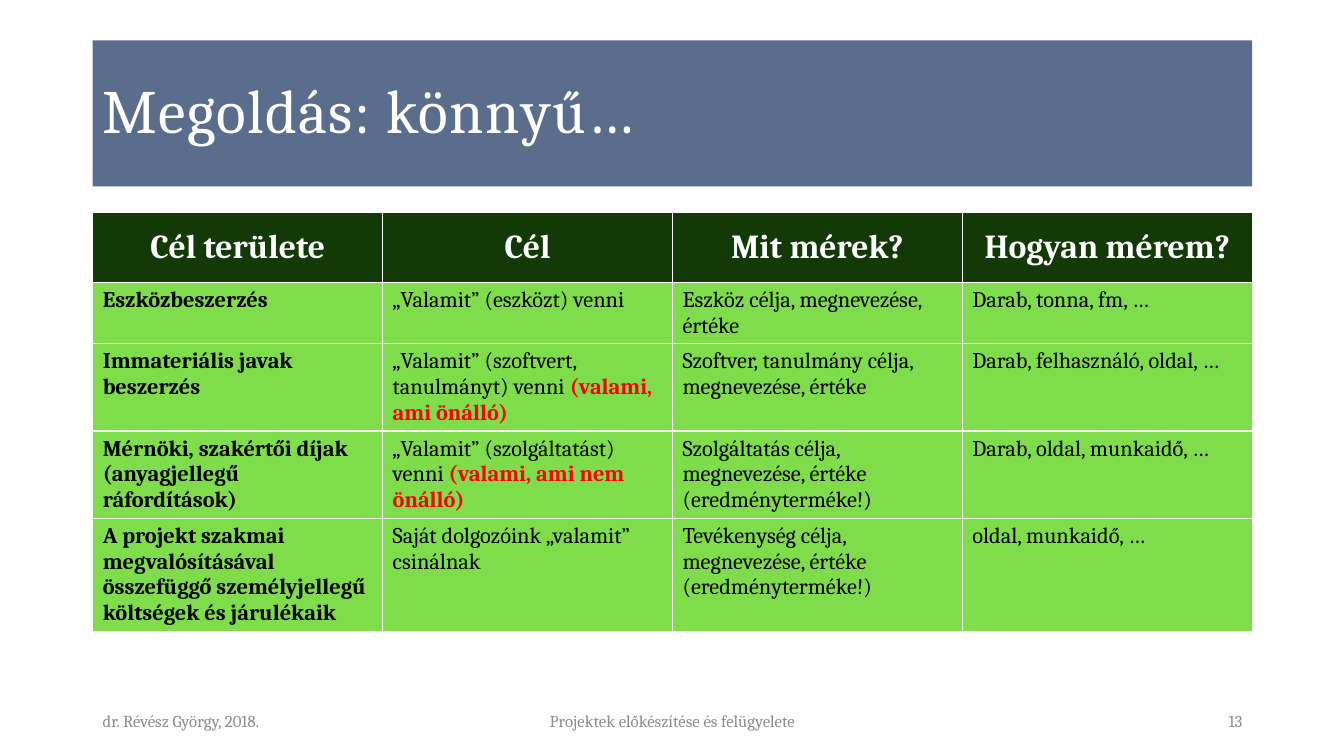
import pptx
import pptx.util
import pptx.dml.color
import pptx.enum.shapes
import pptx.enum.text
import pptx.oxml
import pptx.oxml.ns

EMU_PER_PX = 9144  # 100 px to the inch
ALIGN = pptx.enum.text.PP_ALIGN
ANCHOR = pptx.enum.text.MSO_ANCHOR


def px(length):
    return pptx.util.Emu(length * EMU_PER_PX)


def colour(hex_code):
    return pptx.dml.color.RGBColor.from_string(hex_code)


class SlideBuilder:
    font = "Cambria"
    white, black, grey, red = "FFFFFF", "000000", "8C8C8C", "FF0000"
    blue, dark_green, light_green = "5A6D8D", "123906", "7FDD4B"

    def __init__(self, slide):
        self.slide = slide

    def put_text(self, frame, runs, size, align=ALIGN.LEFT, anchor=ANCHOR.MIDDLE):
        """Fill a text frame with one paragraph of (text, colour, bold) runs."""
        frame.word_wrap = True
        frame.vertical_anchor = anchor
        paragraph = frame.paragraphs[0]
        paragraph.alignment = align
        for text, hex_code, bold in runs:
            run = paragraph.add_run()
            run.text = text
            run.font.color.rgb = colour(hex_code)
            formats = {"name": self.font, "size": pptx.util.Pt(size), "bold": bold}
            for name, value in formats.items():
                setattr(run.font, name, value)
        return paragraph

    def title(self, text, left, top, width, height):
        banner = self.slide.shapes.add_shape(
            pptx.enum.shapes.MSO_SHAPE.RECTANGLE,
            px(left), px(top), px(width), px(height))
        banner.shadow.inherit = False
        banner.fill.solid()
        banner.fill.fore_color.rgb = colour(self.blue)
        banner.line.fill.background()
        heading = self.put_text(banner.text_frame, [(text, self.white, False)], 44)
        heading.line_spacing = 0.9
        heading.runs[0].font._element.set("spc", "100")

    def footer(self, text, left, width, align):
        box = self.slide.shapes.add_textbox(px(left), px(695), px(width), px(40))
        self.put_text(box.text_frame, [(text, self.grey, False)], 12, align)

    def border(self, cell):
        properties = cell._tc.get_or_add_tcPr()
        for position, side in enumerate(("lnL", "lnR", "lnT", "lnB")):
            properties.insert(position, pptx.oxml.parse_xml(
                f'<a:{side} {pptx.oxml.ns.nsdecls("a")} w="12700"><a:solidFill>'
                f'<a:srgbClr val="{self.white}"/></a:solidFill></a:{side}>'))

    def cell(self, cell, runs, fill, size, align, anchor):
        cell.fill.solid()
        cell.fill.fore_color.rgb = colour(fill)
        self.border(cell)
        self.put_text(cell.text_frame, runs, size, align, anchor)
        cell.vertical_anchor = anchor

    def table(self, headers, rows, row_heights, left, top, width, height):
        frame = self.slide.shapes.add_table(
            len(rows) + 1, len(headers), px(left), px(top), px(width), px(height))
        grid = frame.table
        grid.horz_banding = False
        for row, row_height in zip(grid.rows, row_heights):
            row.height = px(row_height)
        frame.height = px(height)
        for column, header in enumerate(headers):
            self.cell(grid.cell(0, column), [(header, self.white, True)],
                      self.dark_green, 24, ALIGN.CENTER, ANCHOR.MIDDLE)
        for number, row in enumerate(rows, 1):
            for column, content in enumerate(row):
                # A tuple holds plain text and a highlighted remark
                text, *remarks = content if isinstance(content, tuple) else (content,)
                runs = [(text, self.black, column == 0)]
                runs += [(remark, self.red, True) for remark in remarks]
                self.cell(grid.cell(number, column), runs,
                          self.light_green, 16, ALIGN.LEFT, ANCHOR.TOP)


HEADERS = ["Cél területe", "Cél", "Mit mérek?", "Hogyan mérem?"]
GOALS = [
    ["Eszközbeszerzés", "„Valamit” (eszközt) venni",
     "Eszköz célja, megnevezése, értéke", "Darab, tonna, fm, …"],
    ["Immateriális javak beszerzés",
     ("„Valamit” (szoftvert, tanulmányt) venni ", "(valami, ami önálló)"),
     "Szoftver, tanulmány célja, megnevezése, értéke",
     "Darab, felhasználó, oldal, …"],
    ["Mérnöki, szakértői díjak (anyagjellegű ráfordítások)",
     ("„Valamit” (szolgáltatást) venni ", "(valami, ami nem önálló)"),
     "Szolgáltatás célja, megnevezése, értéke (eredményterméke!)",
     "Darab, oldal, munkaidő, …"],
    ["A projekt szakmai megvalósításával összefüggő személyjellegű "
     "költségek és járulékaik",
     "Saját dolgozóink „valamit” csinálnak",
     "Tevékenység célja, megnevezése, értéke (eredményterméke!)",
     "oldal, munkaidő, …"],
]
ROW_HEIGHTS = [69, 48, 65, 70, 73]


def main():
    deck = pptx.Presentation()
    deck.slide_width, deck.slide_height = px(1333), px(750)
    builder = SlideBuilder(deck.slides.add_slide(deck.slide_layouts[6]))

    # Title banner
    builder.title("Megoldás: könnyű…", 92, 40, 1150, 145)

    # Goals and how to measure them
    builder.table(HEADERS, GOALS, ROW_HEIGHTS, 92, 211, 1150, 477)

    # Footer: author, course, slide number
    builder.footer("dr. Révész György, 2018.", 92, 300, ALIGN.LEFT)
    builder.footer("Projektek előkészítése és felügyelete", 442, 450, ALIGN.CENTER)
    builder.footer("13", 942, 300, ALIGN.RIGHT)

    deck.save("out.pptx")


if __name__ == "__main__":
    main()
